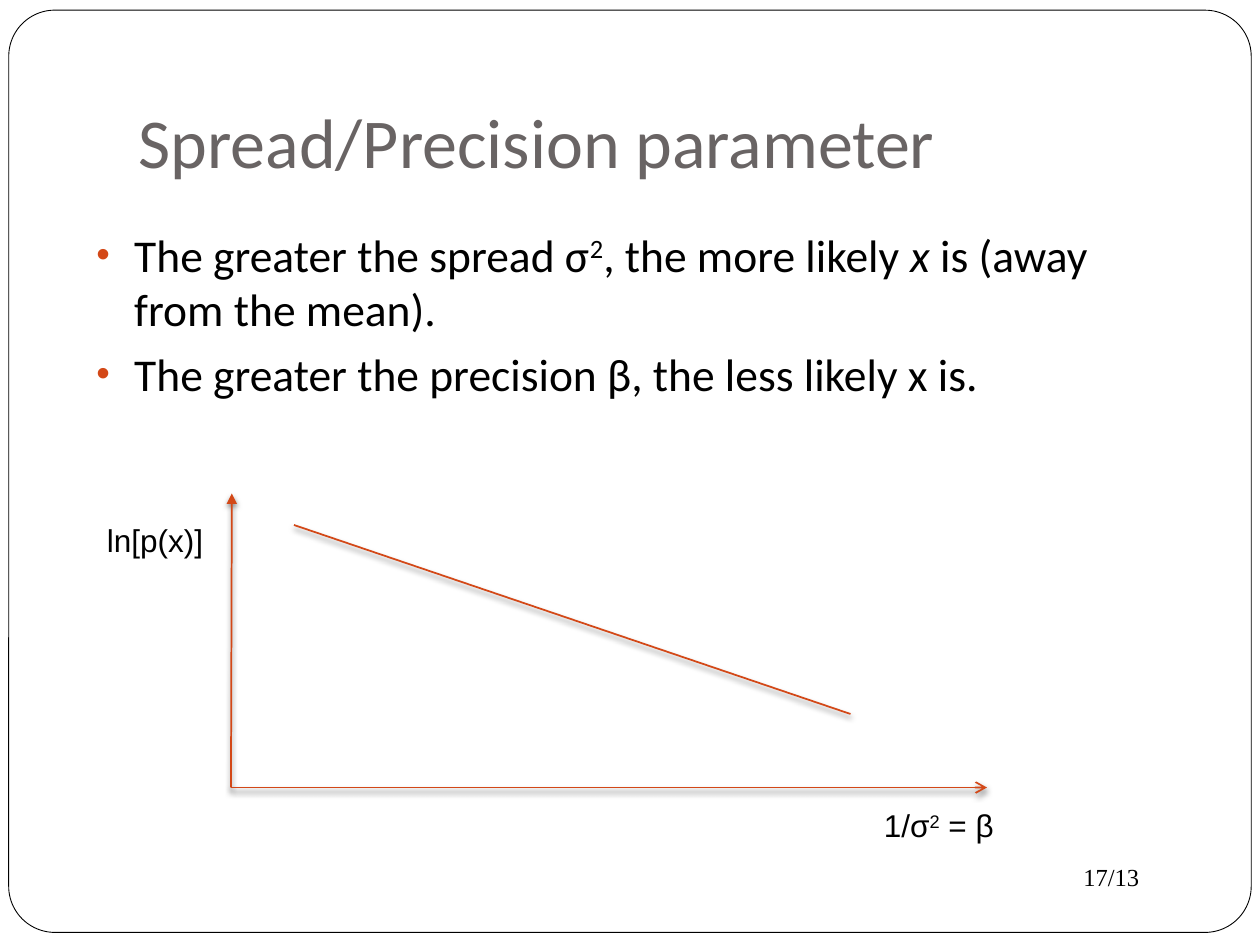
from lxml.etree import SubElement
from pptx import Presentation
from pptx.dml.color import RGBColor
from pptx.enum.shapes import MSO_CONNECTOR as Connector, MSO_SHAPE as Shape
from pptx.enum.text import MSO_ANCHOR as Anchor, MSO_AUTO_SIZE as AutoSize, PP_ALIGN as Align
from pptx.oxml.ns import qn
from pptx.util import Pt

COLORS = {"text": "000000", "title": "696464", "accent": "D34817", "paper": "FFFFFF"}
TITLE = {"name": "Calibri", "size": Pt(40), "color": "title"}
BODY = {"name": "Calibri", "size": Pt(26), "color": "text"}
LABEL = {"name": "Arial", "size": Pt(18), "color": "text"}
PAGE = {"name": "Times New Roman", "size": Pt(14), "color": "text"}
BULLETS = [
    [("The greater the spread σ", ""), ("2", "super"), (", the more likely ", ""),
     ("x ", "italic"), ("is (away from the mean).", "")],
    [("The greater the precision β, the less likely x is.", "")],
]


def color(name):
    return RGBColor.from_string(COLORS[name])


def add_xml(parent, tag, **attributes):
    return SubElement(parent, qn(tag), {key: str(value) for key, value in attributes.items()})


def add_runs(paragraph, pieces, style):
    for text, variant in pieces:
        run = paragraph.add_run()
        run.text = text
        for key, value in style.items():
            if key == "color":
                run.font.color.rgb = color(value)
            else:
                setattr(run.font, key, value)
        if variant == "italic":
            run.font.italic = True
        elif variant == "super":
            run.font._element.set("baseline", "30000")


def add_text(slide, box, paragraphs, style, wrap=True):
    shape = slide.shapes.add_textbox(*map(Pt, box))
    frame = shape.text_frame
    frame.word_wrap = wrap
    for index, pieces in enumerate(paragraphs):
        paragraph = frame.add_paragraph() if index else frame.paragraphs[0]
        add_runs(paragraph, pieces, style)
    return shape


def add_bullet(paragraph):
    paragraph.space_before = Pt(5.8)
    properties = paragraph._p.get_or_add_pPr()
    properties.set("marL", str(Pt(21.6)))
    properties.set("indent", str(-Pt(21.6)))
    add_xml(add_xml(properties, "a:buClr"), "a:srgbClr", val=COLORS["accent"])
    add_xml(properties, "a:buSzPct", val=85000)
    add_xml(properties, "a:buFont", typeface="Arial")
    add_xml(properties, "a:buChar", char="•")


def add_frame(slide):
    frame = slide.shapes.add_shape(Shape.ROUNDED_RECTANGLE, Pt(5), Pt(5.8), Pt(710), Pt(527))
    frame.adjustments[0] = 0.05
    frame.shadow.inherit = False
    frame.fill.solid()
    frame.fill.fore_color.rgb = color("paper")
    frame.line.color.rgb = color("text")
    frame.line.width = Pt(0.5)
    frame.element.getparent().insert(2, frame.element)


def format_title(slide, text):
    title = slide.shapes.title
    for key, value in {"left": 72, "top": 21.6, "width": 612, "height": 90}.items():
        setattr(title, key, Pt(value))
    settings = {"vertical_anchor": Anchor.BOTTOM, "word_wrap": True, "auto_size": AutoSize.NONE,
                "margin_left": Pt(7.2), "margin_top": Pt(3.6),
                "margin_right": Pt(7.2), "margin_bottom": Pt(7.2)}
    for key, value in settings.items():
        setattr(title.text_frame, key, value)
    paragraph = title.text_frame.paragraphs[0]
    paragraph.alignment = Align.LEFT
    add_runs(paragraph, [(text, "")], TITLE)


def add_line(group, start, end, arrow_end=None, arrow_type=None):
    line = group.shapes.add_connector(Connector.STRAIGHT, *map(Pt, start + end))
    line.line.color.rgb = color("accent")
    line.line.width = Pt(1)
    if arrow_end:
        add_xml(line.line._get_or_add_ln(), arrow_end, type=arrow_type)
    effects = add_xml(line._element.spPr, "a:effectLst")
    shadow = add_xml(effects, "a:outerShdw", blurRad=Pt(3), dist=Pt(2), dir=5400000, rotWithShape=0)
    add_xml(add_xml(shadow, "a:srgbClr", val=COLORS["text"]), "a:alpha", val=50000)


def add_plot(slide):
    group = slide.shapes.add_group_shape()
    origin = (132, 450)
    add_line(group, (132.5, 282), origin, "a:headEnd", "triangle")
    add_line(group, origin, (564, 450), "a:tailEnd", "arrow")
    add_line(group, (168, 300), (486, 408))


def main():
    presentation = Presentation()
    presentation.slide_width, presentation.slide_height = Pt(720), Pt(540)
    slide = presentation.slides.add_slide(presentation.slide_layouts[5])
    add_frame(slide)
    format_title(slide, "Spread/Precision parameter")
    add_text(slide, (612, 489, 72, 24.5), [[("17/13", "")]], PAGE)
    body = add_text(slide, (48, 126, 624, 114), BULLETS, BODY)
    for paragraph in body.text_frame.paragraphs:
        add_bullet(paragraph)
    add_text(slide, (54, 294, 70, 29), [[("ln[p(x)]", "")]], LABEL, wrap=False)
    add_plot(slide)
    add_text(slide, (498, 457, 102, 29), [[("1/σ", ""), ("2", "super"), (" = β", "")]], LABEL)
    presentation.save("out.pptx")


if __name__ == "__main__":
    main()
